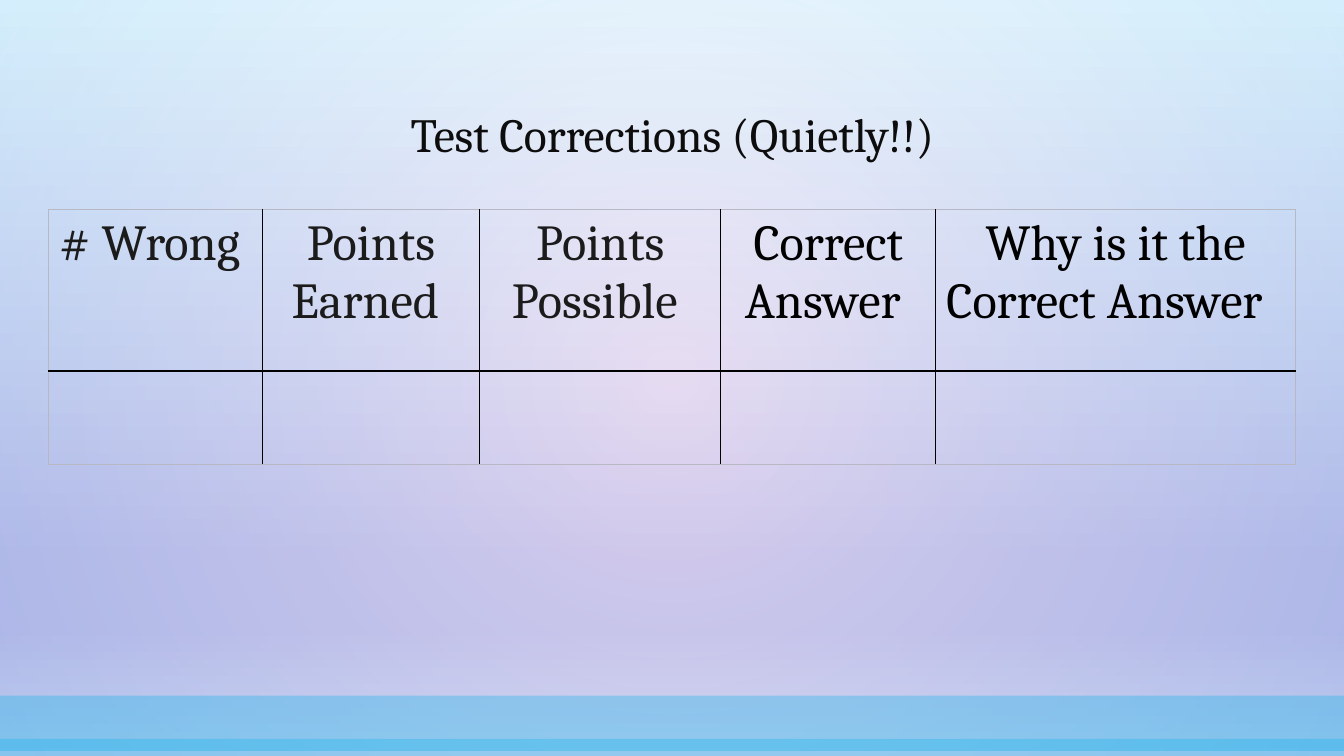
"""Build the test corrections slide with its title and answer table."""
from lxml.etree import SubElement
from pptx import Presentation
from pptx.dml.color import RGBColor
from pptx.enum.shapes import MSO_SHAPE
from pptx.enum.text import MSO_ANCHOR, PP_ALIGN
from pptx.oxml import parse_xml
from pptx.oxml.ns import nsdecls, qn
from pptx.util import Inches, Pt

FONT = "Cambria"
TITLE_COLOR = RGBColor(0x0D, 0x0D, 0x0D)
CHARCOAL = RGBColor(0x1B, 0x1B, 0x1B)
BLACK = RGBColor(0x00, 0x00, 0x00)
FRAME_GRAY = RGBColor(0xB8, 0xB8, 0xC4)
PALE_LILAC = RGBColor(0xF8, 0xF4, 0xFB)
PURPLE = RGBColor(0xBC, 0xA0, 0xDC)
LILAC = RGBColor(0xD3, 0xC0, 0xE8)
WHITE = RGBColor(0xFF, 0xFF, 0xFF)
SKY = RGBColor(0x91, 0xE4, 0xFF)
BAND_BLUE = RGBColor(0x00, 0xB0, 0xEA)

HEADERS = [
    ("# Wrong ", CHARCOAL),
    ("Points Earned ", CHARCOAL),
    ("Points Possible ", CHARCOAL),
    ("Correct Answer ", BLACK),
    ("Why is it the Correct Answer  ", BLACK),
]
COLUMN_WIDTHS = [2.12, 2.16, 2.39, 2.13, 3.57]
ROW_HEIGHTS = [1.6, 0.93]
LINEAR = '<a:lin ang="5400000" scaled="0"/>'
CIRCLE = ('<a:path path="circle"><a:fillToRect l="50000" t="50000" '
          'r="50000" b="50000"/></a:path>')


def gradient_fill(stops, direction):
    """Return a gradient from (position, colour, opacity) percentages."""
    stop_xml = "".join(
        f'<a:gs pos="{position * 1000}"><a:srgbClr val="{color}">'
        f'<a:alpha val="{opacity * 1000}"/></a:srgbClr></a:gs>'
        for position, color, opacity in stops)
    return parse_xml(f'<a:gradFill {nsdecls("a")} rotWithShape="1">'
                     f'<a:gsLst>{stop_xml}</a:gsLst>{direction}</a:gradFill>')


def replace_gradient(owner, fill, stops, direction):
    """Give a shape or background a custom gradient."""
    fill.gradient()
    current = next(owner.iter(qn("a:gradFill")))
    current.getparent().replace(current, gradient_fill(stops, direction))


def add_panel(slide, top, height):
    """Add a full-width rectangle without outline or shadow."""
    panel = slide.shapes.add_shape(MSO_SHAPE.RECTANGLE, 0, Inches(top),
                                   Inches(13.33), Inches(height))
    panel.shadow.inherit = False
    panel.line.fill.background()
    return panel


def add_band(slide, top, height, opacity):
    """Add a translucent blue band."""
    band = add_panel(slide, top, height)
    band.fill.solid()
    band.fill.fore_color.rgb = BAND_BLUE
    color = next(band.element.spPr.iter(qn("a:srgbClr")))
    SubElement(color, qn("a:alpha"), val=str(opacity * 1000))


def add_backdrop(slide):
    """Paint the background, the glow and the bottom bands."""
    background = slide.background
    replace_gradient(slide.element, background.fill,
                     [(0, PALE_LILAC, 100), (74, PURPLE, 100),
                      (83, PURPLE, 100), (100, LILAC, 100)], LINEAR)
    glow = add_panel(slide, 0, 7.5)
    replace_gradient(glow.element, glow.fill,
                     [(0, WHITE, 49), (100, SKY, 35)], CIRCLE)
    add_band(slide, 6.9, 0.55, 30)
    add_band(slide, 7.33, 0.17, 28)


def format_paragraph(paragraph, size, color):
    """Centre a paragraph and set its font."""
    paragraph.alignment = PP_ALIGN.CENTER
    paragraph.font.name = FONT
    paragraph.font.size = Pt(size)
    paragraph.font.bold = False
    paragraph.font.color.rgb = color


def place_title(slide, text):
    """Fill the title placeholder and bring it in front of the backdrop."""
    title = slide.shapes.title
    title.left, title.top = Inches(1.47), Inches(0.48)
    title.width, title.height = Inches(10.4), Inches(1.19)
    title.text_frame.text = text
    title.text_frame.vertical_anchor = MSO_ANCHOR.BOTTOM
    paragraph = title.text_frame.paragraphs[0]
    format_paragraph(paragraph, 34, TITLE_COLOR)
    paragraph.line_spacing = 0.9
    title.element.getparent().append(title.element)


def set_borders(cell, outer_sides):
    """Draw gray lines on the outer sides of a cell and black ones inside."""
    properties = cell._tc.get_or_add_tcPr()
    for side in "LRTB":
        color = FRAME_GRAY if side in outer_sides else BLACK
        line = SubElement(properties, qn(f"a:ln{side}"), w=str(Pt(1)))
        fill = SubElement(line, qn("a:solidFill"))
        SubElement(fill, qn("a:srgbClr"), val=str(color))


def add_corrections_table(slide):
    """Add the table with a header row and an empty row."""
    rows, columns = len(ROW_HEIGHTS), len(COLUMN_WIDTHS)
    table = slide.shapes.add_table(
        rows, columns, Inches(0.48), Inches(2.08),
        Inches(sum(COLUMN_WIDTHS)), Inches(sum(ROW_HEIGHTS))).table
    table.first_row = False
    table.horz_banding = False
    for column, width in zip(table.columns, COLUMN_WIDTHS):
        column.width = Inches(width)
    for row_index, height in enumerate(ROW_HEIGHTS):
        table.rows[row_index].height = Inches(height)
        for column_index in range(columns):
            cell = table.cell(row_index, column_index)
            edges = {"L": column_index == 0, "R": column_index == columns - 1,
                     "T": row_index == 0, "B": row_index == rows - 1}
            set_borders(cell, [side for side in edges if edges[side]])
            cell.fill.background()
    for cell, (text, color) in zip(table.rows[0].cells, HEADERS):
        cell.text = text
        format_paragraph(cell.text_frame.paragraphs[0], 36, color)


def main():
    """Create and save the presentation."""
    presentation = Presentation()
    presentation.slide_width = Inches(13.33)
    presentation.slide_height = Inches(7.5)
    slide = presentation.slides.add_slide(presentation.slide_layouts[5])
    add_backdrop(slide)
    place_title(slide, "Test Corrections (Quietly!!)")
    add_corrections_table(slide)
    presentation.save("out.pptx")


if __name__ == "__main__":
    main()
